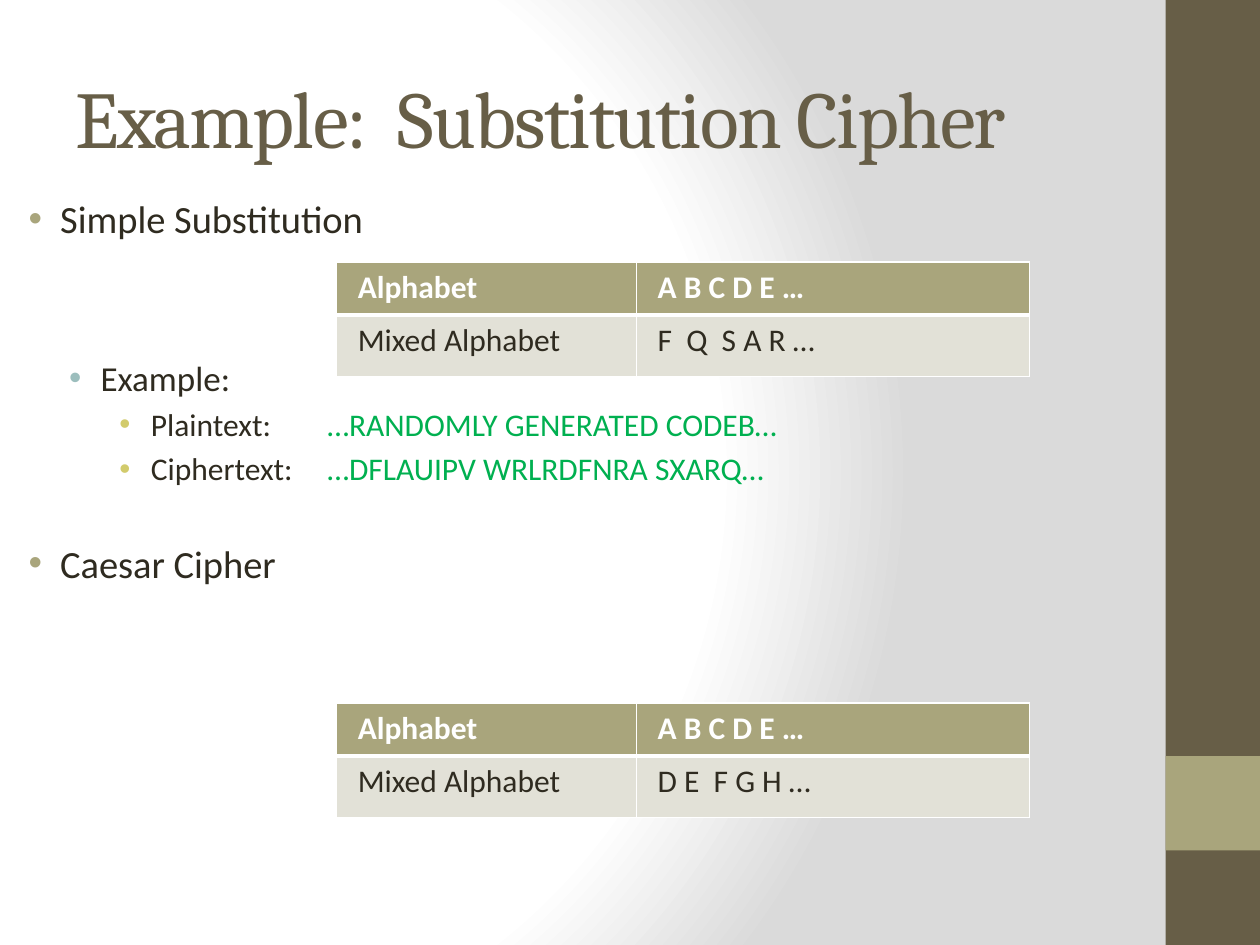
import dataclasses

import pptx
import pptx.dml.color
import pptx.enum.shapes
import pptx.enum.text
import pptx.oxml
import pptx.oxml.ns
import pptx.util
from pptx.util import Inches


@dataclasses.dataclass(frozen=True)
class Theme:
    """Colours, fonts and type sizes of the slide."""
    brown: str = "675E47"
    olive: str = "A9A57C"
    pale: str = "E2E1D7"
    ink: str = "2F2B20"
    white: str = "FFFFFF"
    grey: str = "DADADA"
    green: str = "00B050"
    heading_font: str = "Cambria"
    body_font: str = "Calibri"
    title_size: int = 46
    cell_size: int = 18
    level_sizes: tuple = (22, 20, 18)
    bullet_colours: tuple = ("A9A57C", "9CBEBD", "D2CB6C")
    level_indents: tuple = (0.38, 0.7, 1.1)


THEME = Theme()
NS = pptx.oxml.ns.nsdecls("a", "p")

OUTLINE = [
    (0, 0, [("Simple Substitution", THEME.ink)]),
    (1, 66, [("Example:", THEME.ink)]),
    (2, 3.6, [("Plaintext: \t", THEME.ink),
              ("…RANDOMLY GENERATED CODEB…", THEME.green)]),
    (2, 3.6, [("Ciphertext:", THEME.ink),
              ("\t…DFLAUIPV WRLRDFNRA SXARQ…", THEME.green)]),
    (0, 30, [("Caesar Cipher", THEME.ink)]),
]


def set_attributes(target, formats):
    """Set each format value on the target."""
    for name, value in formats.items():
        setattr(target, name, value)


def add_text(paragraph, text, size, colour, font=THEME.body_font, bold=False):
    """Add a styled run to a paragraph and return it."""
    run = paragraph.add_run()
    run.text = text
    set_attributes(run.font, {"name": font, "size": pptx.util.Pt(size), "bold": bold})
    run.font.color.rgb = pptx.dml.color.RGBColor.from_string(colour)
    return run


def paint(fill, colour):
    """Make a fill solid in one colour."""
    fill.solid()
    fill.fore_color.rgb = pptx.dml.color.RGBColor.from_string(colour)


def add_background(slide):
    """Give the slide a radial gradient from white to grey."""
    stops = "".join(
        f'<a:gs pos="{position * 1000}"><a:srgbClr val="{colour}"/></a:gs>'
        for position, colour in ((0, THEME.white), (75, THEME.white), (100, THEME.grey)))
    slide.element.cSld.insert(0, pptx.oxml.parse_xml(
        f'<p:bg {NS}><p:bgPr><a:gradFill rotWithShape="1"><a:gsLst>{stops}</a:gsLst>'
        '<a:path path="circle"><a:fillToRect l="20000" t="50000" r="100000" b="50000"/>'
        '</a:path></a:gradFill><a:effectLst/></p:bgPr></p:bg>'))


def add_sidebar(slide, left, top, width, height):
    """Draw the side band with its square accent."""
    for y, tall, colour in ((top, height, THEME.brown),
                            (top + height - 2 * width, width, THEME.olive)):
        band = slide.shapes.add_shape(
            pptx.enum.shapes.MSO_SHAPE.RECTANGLE, left, y, width, tall)
        paint(band.fill, colour)
        band.line.fill.background()
        band.shadow.inherit = False


def add_title(slide, left, top, width, height):
    """Write the slide title, centred vertically in its box."""
    frame = slide.shapes.add_textbox(left, top, width, height).text_frame
    set_attributes(frame, {"word_wrap": True,
                           "vertical_anchor": pptx.enum.text.MSO_ANCHOR.MIDDLE})
    title = add_text(frame.paragraphs[0], "Example:  Substitution Cipher",
                     THEME.title_size, THEME.brown, THEME.heading_font)
    title.font._element.set("spc", "-100")


def add_outline(slide, left, top, width, height):
    """Write the bulleted outline at its three levels."""
    frame = slide.shapes.add_textbox(left, top, width, height).text_frame
    frame.word_wrap = True
    for index, (level, gap, parts) in enumerate(OUTLINE):
        point = frame.add_paragraph() if index else frame.paragraphs[0]
        set_attributes(point, {"level": level, "space_before": pptx.util.Pt(gap)})
        properties = point._p.get_or_add_pPr()
        properties.set("marL", str(Inches(THEME.level_indents[level])))
        properties.set("indent", str(Inches(-0.25)))
        for bullet in (f'<a:buClr {NS}><a:srgbClr val="{THEME.bullet_colours[level]}"/></a:buClr>',
                       f'<a:buFont {NS} typeface="Arial"/>',
                       f'<a:buChar {NS} char="•"/>'):
            properties.append(pptx.oxml.parse_xml(bullet))
        for text, colour in parts:
            add_text(point, text, THEME.level_sizes[level], colour)


def add_borders(cell, widths):
    """Draw white cell borders with a width in points for each side."""
    for side, points in widths.items():
        cell._tc.get_or_add_tcPr().append(pptx.oxml.parse_xml(
            f'<a:ln{side} {NS} w="{pptx.util.Pt(points)}"><a:solidFill>'
            f'<a:srgbClr val="{THEME.white}"/></a:solidFill></a:ln{side}>'))


def add_alphabet_table(slide, left, top, width, height, mixed):
    """Pair the alphabet with its mixed form in a two-row table."""
    table = slide.shapes.add_table(2, 2, left, top, width, height).table
    table.horz_banding = False
    for column, share in zip(table.columns, (2.38, 3.12)):
        column.width = Inches(share)
    for row, tall in zip(table.rows, (0.42, 0.49)):
        row.height = Inches(tall)
    rows = (
        (("Alphabet", "A B C D E …"), THEME.olive, THEME.white, True,
         {"L": 1, "R": 1, "T": 1, "B": 3}),
        (("Mixed Alphabet", mixed), THEME.pale, THEME.ink, False,
         {"L": 1, "R": 1, "T": 3, "B": 1}),
    )
    for row, (texts, fill, ink, bold, borders) in zip(table.rows, rows):
        for cell, text in zip(row.cells, texts):
            set_attributes(cell, {"margin_left": Inches(0.17), "margin_right": Inches(0.17),
                                  "margin_top": Inches(0.05), "margin_bottom": Inches(0.05)})
            add_borders(cell, borders)
            paint(cell.fill, fill)
            add_text(cell.text_frame.paragraphs[0], text, THEME.cell_size, ink, bold=bold)


def main():
    """Build the slide and save it."""
    deck = pptx.Presentation()
    set_attributes(deck, {"slide_width": Inches(10), "slide_height": Inches(7.5)})
    slide = deck.slides.add_slide(deck.slide_layouts[6])
    table_box = {"left": Inches(2.67), "width": Inches(5.5), "height": Inches(0.91)}
    add_background(slide)
    add_sidebar(slide, Inches(9.25), Inches(0), Inches(0.75), Inches(7.5))
    add_title(slide, Inches(0.5), Inches(0.3), Inches(8.33), Inches(1.25))
    add_alphabet_table(slide, top=Inches(2.08), mixed="F  Q  S A R …", **table_box)
    add_outline(slide, Inches(0), Inches(1.5), Inches(9.67), Inches(5.83))
    add_alphabet_table(slide, top=Inches(5.58), mixed="D E  F G H …", **table_box)
    deck.save("out.pptx")


if __name__ == "__main__":
    main()
